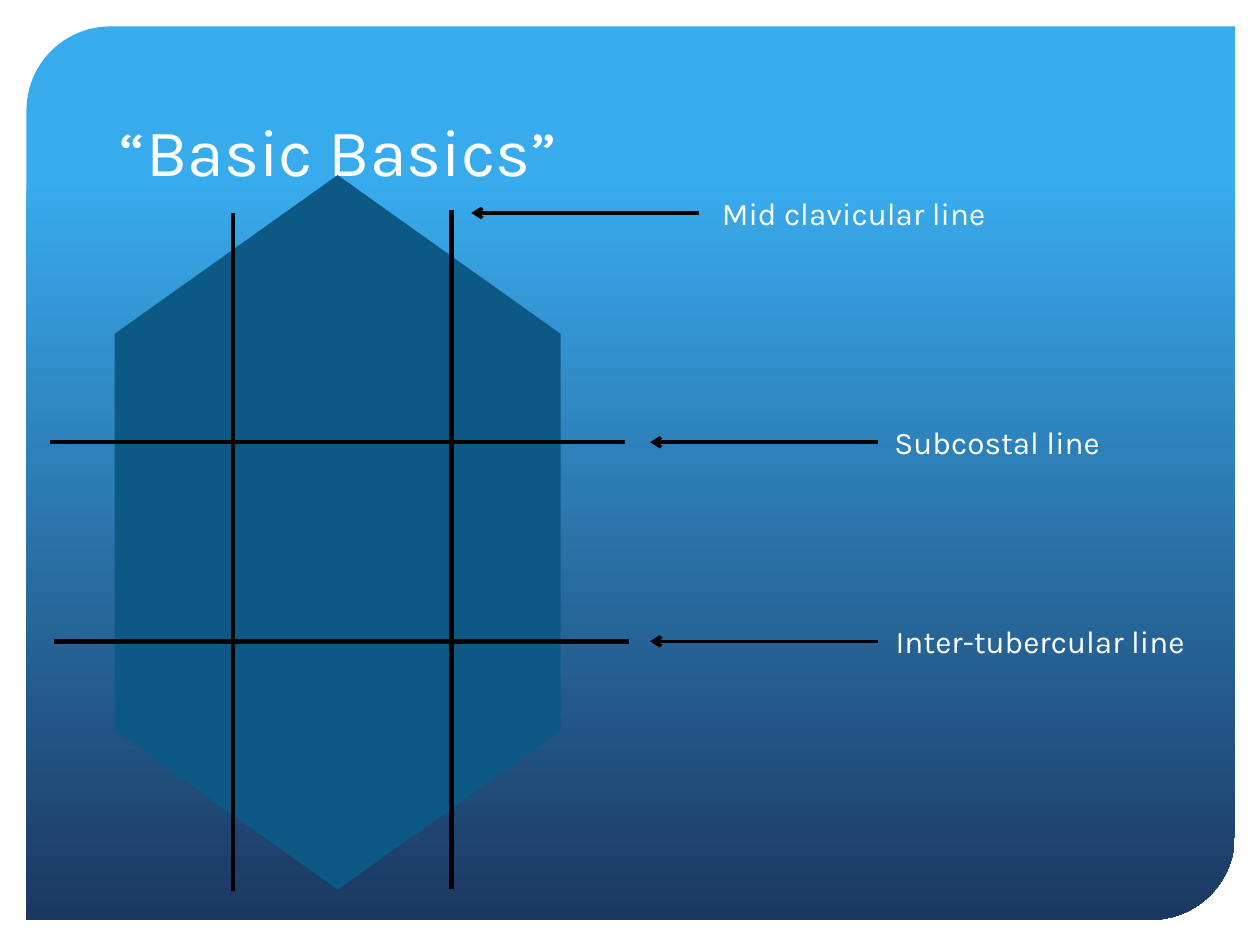
from dataclasses import dataclass

import pptx
import pptx.dml.color
import pptx.enum.shapes
import pptx.enum.text
import pptx.oxml
import pptx.oxml.ns
import pptx.util

Pt = pptx.util.Pt
SHAPE = pptx.enum.shapes.MSO_SHAPE
ANCHOR = pptx.enum.text.MSO_ANCHOR

FONT = "Karla"
COLORS = {
    "sky": "38ABED",
    "navy": "1B3861",
    "torso": "0C5986",
    "line": "000000",
    "text": "FFFFFF",
}


@dataclass
class Line:
    x1: float
    y1: float
    x2: float
    y2: float


@dataclass
class Callout:
    text: str
    tip_x: float
    y: float
    text_x: float


TORSO_X, TORSO_W = 65.5, 254.9
TORSO_TOP, TORSO_H = 190.8, 226.8
CAP_H = 90.7
SUBCOSTAL_Y, TUBERCULAR_Y, CLAVICULAR_Y = 252.7, 366.5, 121.7
ARROW_LENGTH = 130.3

GRID_LINES = [
    Line(133.2, 509, 133.2, 121.7),
    Line(257.9, 508.3, 257.9, 120.2),
    Line(28.8, SUBCOSTAL_Y, 357.1, SUBCOSTAL_Y),
    Line(31, TUBERCULAR_Y, 359.3, TUBERCULAR_Y),
]
CALLOUTS = [
    Callout("Subcostal line", 371.5, SUBCOSTAL_Y, 504),
    Callout("Inter-tubercular line", 371.5, TUBERCULAR_Y, 504.7),
    Callout("Mid clavicular line", 269.3, CLAVICULAR_Y, 405.4),
]


def rgb(name: str) -> pptx.dml.color.RGBColor:
    return pptx.dml.color.RGBColor.from_string(COLORS[name])


def add_shape(s, kind, x: float, y: float, w: float, h: float):
    sp = s.shapes.add_shape(kind, Pt(x), Pt(y), Pt(w), Pt(h))
    sp.shadow.inherit = False
    sp.line.fill.background()
    return sp


def add_panel(s) -> None:
    sp = add_shape(s, SHAPE.ROUND_2_DIAG_RECTANGLE, 15.1, 15.1, 690.5, 510.5)
    sp.adjustments[0] = 0.094
    sp.adjustments[1] = 0
    sp.fill.gradient()
    sp.fill.gradient_angle = 270
    for stop, position, name in zip(
        sp.fill.gradient_stops, (0.17, 1), ("sky", "navy")
    ):
        stop.position = position
        stop.color.rgb = rgb(name)


def add_torso_part(s, kind, y: float, h: float, rotation: float = 0) -> None:
    sp = add_shape(s, kind, TORSO_X, y, TORSO_W, h)
    sp.rotation = rotation
    sp.fill.solid()
    sp.fill.fore_color.rgb = rgb("torso")


def add_line(s, line: Line, width: float, arrow: bool = False) -> None:
    sp = s.shapes.add_connector(
        pptx.enum.shapes.MSO_CONNECTOR.STRAIGHT,
        Pt(line.x1), Pt(line.y1), Pt(line.x2), Pt(line.y2),
    )
    sp.line.color.rgb = rgb("line")
    sp.line.width = Pt(width)
    qn = pptx.oxml.ns.qn
    props = sp._element.spPr
    if arrow:
        tail = props.find(qn("a:ln")).makeelement(qn("a:tailEnd"), {"type": "arrow"})
        props.find(qn("a:ln")).append(tail)
    props.append(props.makeelement(qn("a:effectLst"), {}))


def add_text(
    s, text: str, x: float, y: float, w: float, h: float, size: float, anchor
) -> None:
    tf = s.shapes.add_textbox(Pt(x), Pt(y), Pt(w), Pt(h)).text_frame
    tf.word_wrap = True
    tf.vertical_anchor = anchor
    tf.text = text
    r = tf.paragraphs[0].runs[0]
    r.font.name = FONT
    r.font.size = Pt(size)
    r.font.color.rgb = rgb("text")


def add_callout(s, callout: Callout) -> None:
    """Draw a label with an arrow pointing left from it."""
    start_x = callout.tip_x + ARROW_LENGTH
    add_line(s, Line(start_x, callout.y, callout.tip_x, callout.y), 2, arrow=True)
    add_text(
        s, callout.text, callout.text_x, callout.y - 14.4, 193, 28.8, 18, ANCHOR.TOP
    )


def main() -> None:
    prs = pptx.Presentation()
    prs.slide_width, prs.slide_height = Pt(720), Pt(540)
    s = prs.slides.add_slide(prs.slide_layouts[6])

    add_panel(s)
    add_text(s, "“Basic Basics”", 61.2, 30.2, 596.9, 82.1, 38, ANCHOR.BOTTOM)
    add_torso_part(s, SHAPE.RECTANGLE, TORSO_TOP, TORSO_H)
    add_torso_part(s, SHAPE.ISOSCELES_TRIANGLE, TORSO_TOP - CAP_H, CAP_H)
    add_torso_part(s, SHAPE.ISOSCELES_TRIANGLE, TORSO_TOP + TORSO_H, CAP_H, 180)
    for line in GRID_LINES:
        add_line(s, line, 2.5)
    for callout in CALLOUTS:
        add_callout(s, callout)

    prs.save("out.pptx")


if __name__ == "__main__":
    main()
